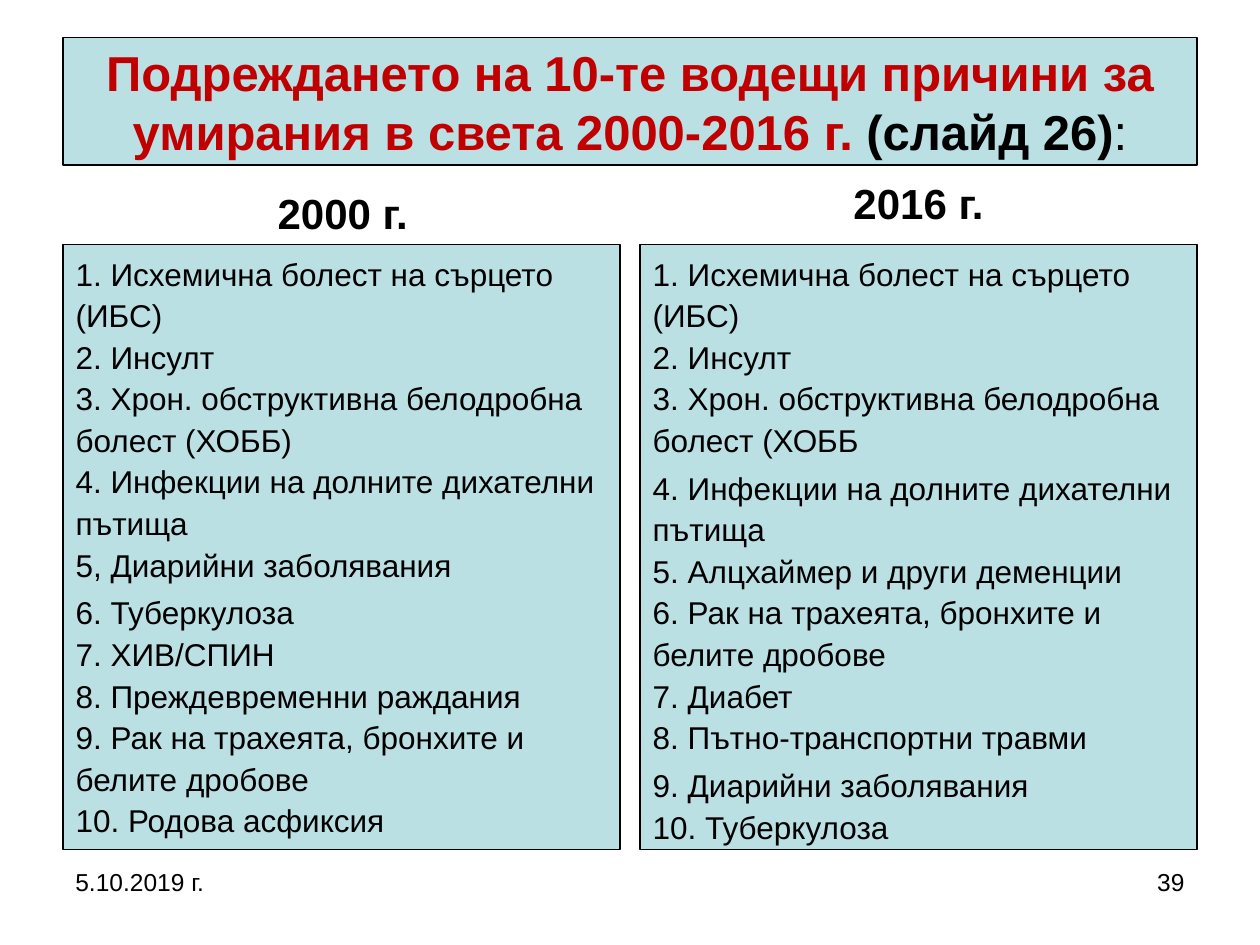
from dataclasses import dataclass

from lxml.etree import SubElement
from pptx import Presentation
from pptx.dml.color import RGBColor as Color
from pptx.enum.text import MSO_ANCHOR as Anchor, MSO_AUTO_SIZE as AutoSize, PP_ALIGN as Align
from pptx.oxml.ns import qn
from pptx.util import Inches, Pt


@dataclass(frozen=True)
class Theme:
    font: str = "Arial"
    panel: Color = Color(0xBB, 0xE0, 0xE3)
    accent: Color = Color(0xC0, 0x00, 0x00)
    ink: Color = Color(0x00, 0x00, 0x00)
    title_size: int = 28
    heading_size: int = 24
    list_size: int = 18
    footer_size: int = 14


@dataclass(frozen=True)
class Column:
    heading: str
    left: float
    heading_left: float
    heading_top: float
    groups: list[list[str]]  # one paragraph per group, one line per cause


THEME = Theme()
MARGIN, CONTENT_WIDTH = 0.5, 9
COLUMN_WIDTH = 4.42
RIGHT_COLUMN = MARGIN + CONTENT_WIDTH - COLUMN_WIDTH
FOOTER_WIDTH = 2.33

COLUMNS = [
    Column("2000 г.", MARGIN, 0.51, 1.39, [
        ["1. Исхемична болест на сърцето (ИБС)",
         "2. Инсулт",
         "3. Хрон. обструктивна белодробна болест (ХОББ)",
         "4. Инфекции на долните дихателни пътища",
         "5, Диарийни заболявания"],
        ["6. Туберкулоза",
         "7. ХИВ/СПИН",
         "8. Преждевременни раждания",
         "9. Рак на трахеята, бронхите и белите дробове",
         "10. Родова асфиксия"],
    ]),
    Column("2016 г.", RIGHT_COLUMN, RIGHT_COLUMN, 1.31, [
        ["1. Исхемична болест на сърцето (ИБС)",
         "2. Инсулт",
         "3. Хрон. обструктивна белодробна болест (ХОББ"],
        ["4. Инфекции на долните дихателни пътища",
         "5. Алцхаймер и други деменции",
         "6. Рак на трахеята, бронхите и белите дробове",
         "7. Диабет",
         "8. Пътно-транспортни травми"],
        ["9. Диарийни заболявания",
         "10. Туберкулоза"],
    ]),
]


def place(shape, left: float, top: float, width: float, height: float, anchor: Anchor) -> None:
    shape.left, shape.top = Inches(left), Inches(top)
    shape.width, shape.height = Inches(width), Inches(height)
    frame = shape.text_frame
    frame.word_wrap = True
    frame.auto_size = AutoSize.NONE
    frame.vertical_anchor = anchor


def paint_panel(shape) -> None:
    shape.fill.solid()
    shape.fill.fore_color.rgb = THEME.panel
    shape.line.color.rgb = THEME.ink
    shape.line.width = Pt(0.75)


def format_run(run, size: int, color: Color = THEME.ink, bold: bool = False) -> None:
    run.font.name, run.font.size = THEME.font, Pt(size)
    run.font.bold, run.font.color.rgb = bold, color


def format_paragraph(paragraph, size: int, align: Align, bold: bool = False) -> None:
    paragraph.alignment = align
    for run in paragraph.runs:
        format_run(run, size, bold=bold)


def remove_bullet(paragraph) -> None:
    properties = paragraph._p.get_or_add_pPr()
    properties.set("marL", "0")
    properties.set("indent", "0")
    SubElement(properties, qn("a:buNone"))


def add_title(shape) -> None:
    place(shape, MARGIN, 0.3, CONTENT_WIDTH, 1.01, Anchor.MIDDLE)
    paint_panel(shape)
    paragraph = shape.text_frame.paragraphs[0]
    paragraph.alignment = Align.CENTER
    for text, color, bold in [
        ("Подреждането на 10-те водещи причини за умирания в света 2000-2016 г. ",
         THEME.accent, True),
        ("(слайд 26)", THEME.ink, True),
        (":", THEME.ink, False),
    ]:
        run = paragraph.add_run()
        run.text = text
        format_run(run, THEME.title_size, color, bold)


def add_column(heading, body, column: Column) -> None:
    place(heading, column.heading_left, column.heading_top, COLUMN_WIDTH, 0.55, Anchor.BOTTOM)
    heading.text_frame.text = column.heading
    paragraph = heading.text_frame.paragraphs[0]
    remove_bullet(paragraph)
    paragraph.space_before = Pt(0)
    format_paragraph(paragraph, THEME.heading_size, Align.CENTER, bold=True)

    place(body, column.left, 1.94, COLUMN_WIDTH, 4.8, Anchor.TOP)
    paint_panel(body)
    frame = body.text_frame
    for index, causes in enumerate(column.groups):
        paragraph = frame.add_paragraph() if index else frame.paragraphs[0]
        paragraph.text = "\v".join(causes)
        remove_bullet(paragraph)
        paragraph.line_spacing = 1.1
        paragraph.space_before = Pt(0.2 * THEME.list_size if index else 0)
        format_paragraph(paragraph, THEME.list_size, Align.LEFT)
        # Line breaks need the list size too, to keep the lines even
        for line_break in paragraph._p.findall(qn("a:br")):
            SubElement(line_break, qn("a:rPr")).set("sz", str(THEME.list_size * 100))


def add_footer(slide, text: str, left: float, align: Align) -> None:
    box = slide.shapes.add_textbox(0, 0, 0, 0)
    place(box, left, 6.83, FOOTER_WIDTH, 0.52, Anchor.TOP)
    box.text_frame.text = text
    format_paragraph(box.text_frame.paragraphs[0], THEME.footer_size, align)


def main() -> None:
    presentation = Presentation()
    presentation.slide_width, presentation.slide_height = Inches(10), Inches(7.5)
    comparison_layout = presentation.slide_layouts[4]
    slide = presentation.slides.add_slide(comparison_layout)

    # Title and the two ranked lists
    title, *column_parts = slide.placeholders
    add_title(title)
    for heading, body, column in zip(column_parts[::2], column_parts[1::2], COLUMNS):
        add_column(heading, body, column)

    # Date and slide number
    add_footer(slide, "5.10.2019 г.", MARGIN, Align.LEFT)
    add_footer(slide, "39", MARGIN + CONTENT_WIDTH - FOOTER_WIDTH, Align.RIGHT)

    presentation.save("out.pptx")


if __name__ == "__main__":
    main()
